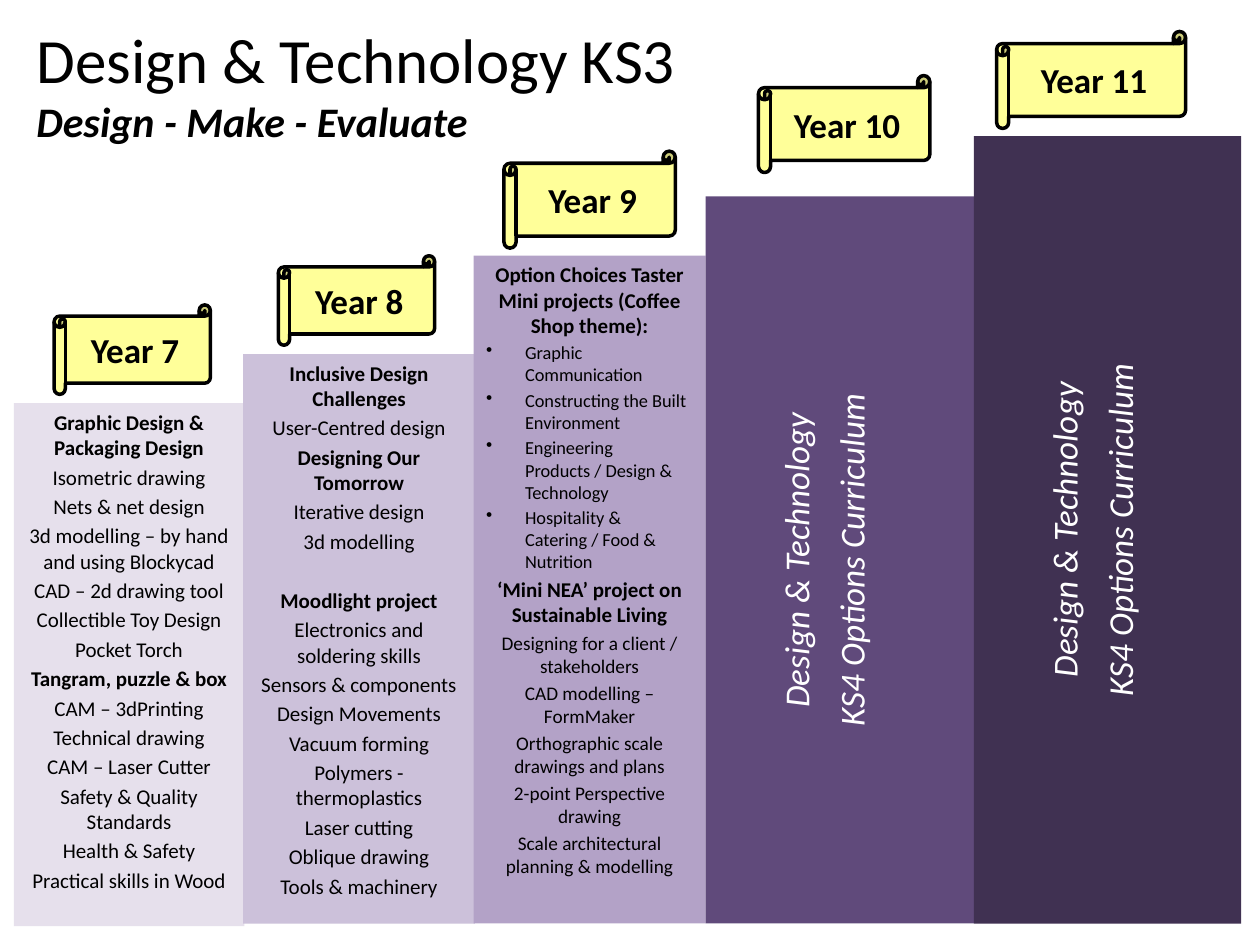
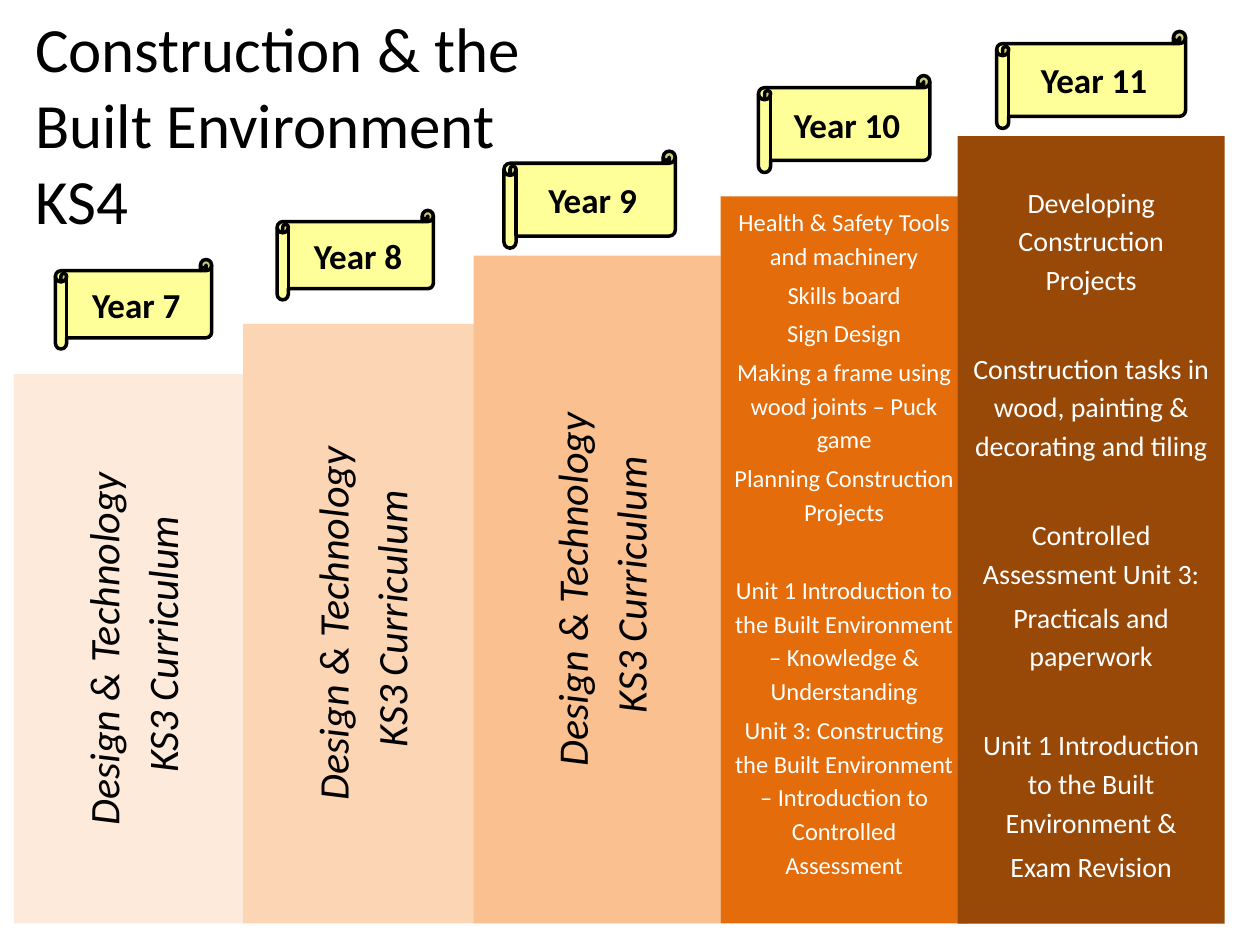
from dataclasses import dataclass

from lxml.etree import SubElement
from pptx import Presentation
from pptx.dml.color import RGBColor
from pptx.enum.shapes import MSO_SHAPE
from pptx.enum.text import MSO_ANCHOR, MSO_AUTO_SIZE, PP_ALIGN
from pptx.oxml.ns import qn
from pptx.util import Pt

PX = 9144
FONT = "Calibri"
BLACK, WHITE, SCROLL_YELLOW = "000000", "FFFFFF", "FFFF99"
FLOOR = 733
INSET = 5
BULLET_INDENT = 31
LINE_HEIGHT = 1.22
BEFORE = 0.2


def px(length):
    """Turn px into EMU."""
    return int(length * PX)


def colour(code):
    """Turn a hex string into a colour."""
    return RGBColor.from_string(code)


def blank_line(size, spacing):
    """Give the height in points of an empty line and the space before it."""
    return size * (LINE_HEIGHT * spacing + BEFORE)


@dataclass
class Entry:
    """One paragraph of a year's column."""
    text: str
    size: float = 12
    bold: bool = False
    italic: bool = False
    bullet: bool = False
    gap: bool = False


@dataclass
class Column:
    """Place and colours of a year's column."""
    left: int
    top: int
    width: int
    fill: str
    ink: str = BLACK
    bottom: int = FLOOR


def entries(size, *texts):
    """Make plain entries of one size."""
    return [Entry(text, size) for text in texts]


def heading(text, gap=False):
    """Make a bold entry."""
    return Entry(text, bold=True, gap=gap)


class Builder:
    """Holds the deck, its style and the current page."""

    def __init__(self):
        """Start an empty deck."""
        self.deck = Presentation()
        self.deck.slide_width, self.deck.slide_height = px(1000), px(750)
        self.page = None

    def new_page(self):
        """Add a blank page and make it current."""
        self.page = self.deck.slides.add_slide(self.deck.slide_layouts[6])

    def style(self, font, size, ink=BLACK, bold=False, italic=False):
        """Set a font."""
        font.name, font.size = FONT, Pt(size)
        font.bold, font.italic = bold, italic
        font.color.rgb = colour(ink)

    def title(self, left, top, width, height, *spans):
        """Add a title made of (text, size, emphasis) spans."""
        box = self.page.shapes.add_textbox(*map(px, (left, top, width, height)))
        frame = box.text_frame
        frame.word_wrap = True
        frame.auto_size = MSO_AUTO_SIZE.SHAPE_TO_FIT_TEXT
        for text, size, emphasis in spans:
            span = frame.paragraphs[0].add_run()
            span.text = text
            self.style(span.font, size, bold=emphasis, italic=emphasis)

    def shape(self, kind, left, top, width, height, fill):
        """Add a filled shape without shadow or line."""
        box = self.page.shapes.add_shape(kind, *map(px, (left, top, width, height)))
        box.shadow.inherit = False
        box.fill.solid()
        box.fill.fore_color.rgb = colour(fill)
        box.line.fill.background()
        box.text_frame.word_wrap = True
        return box

    def scroll(self, year, left, top, width, height):
        """Add the scroll that names a year."""
        box = self.shape(MSO_SHAPE.HORIZONTAL_SCROLL, left, top, width, height, SCROLL_YELLOW)
        box.line.color.rgb = colour(BLACK)
        box.line.width = Pt(2)
        box.text_frame.vertical_anchor = MSO_ANCHOR.MIDDLE
        para = box.text_frame.paragraphs[0]
        para.text = f"Year {year}"
        para.alignment = PP_ALIGN.CENTER
        self.style(para.font, 20, bold=True)

    def bullet(self, para):
        """Give a paragraph a hanging bullet."""
        properties = para._p.get_or_add_pPr()
        properties.set("marL", str(px(BULLET_INDENT)))
        properties.set("indent", str(-px(BULLET_INDENT)))
        SubElement(properties, qn("a:buChar")).set("char", "•")

    def column(self, place, lines, spacing=1.0, lead=0):
        """Add a year's column, its text starting below a blank line of size lead."""
        box = self.shape(MSO_SHAPE.RECTANGLE, place.left, place.top, place.width,
                         place.bottom - place.top, place.fill)
        frame = box.text_frame
        frame.vertical_anchor = MSO_ANCHOR.TOP
        frame.margin_top = px(INSET) + Pt(blank_line(lead, spacing))
        for index, line in enumerate(lines):
            para = frame.add_paragraph() if index else frame.paragraphs[0]
            para.text = line.text
            para.alignment = PP_ALIGN.LEFT if line.bullet else PP_ALIGN.CENTER
            para.line_spacing = spacing
            skipped = blank_line(line.size, spacing) if line.gap else 0
            para.space_before = Pt(round(line.size * BEFORE + skipped, 1))
            if line.bullet:
                self.bullet(para)
            self.style(para.font, line.size, place.ink, line.bold, line.italic)
        return frame

    def sideways_column(self, place, stage, size, spacing=1.0, lead=20):
        """Add a column whose text reads upwards."""
        lines = [Entry(text, size, italic=True) for text in ("Design & Technology", stage)]
        frame = self.column(place, lines, spacing)
        frame.margin_left = px(INSET) + Pt(blank_line(lead, spacing))
        frame.margin_right = px(INSET)
        frame.margin_top = frame.margin_bottom = px(10)
        frame._txBody.bodyPr.set("vert", "vert270")

    def upper_scrolls(self):
        """Add the scrolls that stand in the same place on every page."""
        self.scroll(9, 400, 120, 136, 77)
        self.scroll(10, 602, 60, 136, 77)
        self.scroll(11, 791, 25, 150, 77)


def key_stage_3(builder):
    """Build the Design & Technology page."""
    builder.new_page()
    builder.title(19, 11, 541, 111, ("Design & Technology KS3 ", 36, False),
                  ("Design - Make - Evaluate", 24, True))
    builder.column(Column(11, 320, 183, "E6E0EC", bottom=735), [
        heading("Graphic Design & Packaging Design"),
        *entries(12, "Isometric drawing", "Nets & net design",
                 "3d modelling – by hand and using Blockycad", "CAD – 2d drawing tool",
                 "Collectible Toy Design", "Pocket Torch"),
        heading("Tangram, puzzle & box"),
        *entries(12, "CAM – 3dPrinting", "Technical drawing", "CAM – Laser Cutter",
                 "Safety & Quality Standards", "Health & Safety", "Practical skills in Wood"),
    ])
    builder.column(Column(193, 281, 184, "CCC1DA"), [
        heading("Inclusive Design Challenges"),
        *entries(12, "User-Centred design"),
        heading("Designing Our Tomorrow"),
        *entries(12, "Iterative design", "3d modelling"),
        heading("Moodlight project", gap=True),
        *entries(12, "Electronics and soldering skills", "Sensors & components",
                 "Design Movements", "Vacuum forming", "Polymers - thermoplastics",
                 "Laser cutting", "Oblique drawing", "Tools & machinery"),
    ])
    tasters = ("Graphic Communication", "Constructing the Built Environment",
               "Engineering Products / Design & Technology",
               "Hospitality & Catering / Food & Nutrition")
    builder.column(Column(376, 203, 184, "B3A2C7"), [
        heading("Option Choices Taster Mini projects (Coffee Shop theme):"),
        *(Entry(text, 10.5, bullet=True) for text in tasters),
        heading("‘Mini NEA’ project on Sustainable Living"),
        *entries(11, "Designing for a client / stakeholders", "CAD modelling – FormMaker",
                 "Orthographic scale drawings and plans", "2-point Perspective drawing",
                 "Scale architectural planning & modelling"),
    ])
    for place in (Column(560, 156, 213, "604A7B", WHITE), Column(773, 108, 212, "403152", WHITE)):
        builder.sideways_column(place, "KS4 Options Curriculum", 20, spacing=1.15)
    builder.scroll(7, 43, 242, 124, 71)
    builder.scroll(8, 221, 203, 124, 71)
    builder.upper_scrolls()


def key_stage_4(builder):
    """Build the Construction page."""
    builder.new_page()
    builder.title(18, 3, 443, 192, ("Construction & the Built Environment KS4", 36, False))
    for place, lead in ((Column(11, 297, 183, "FDEADA"), 23),
                        (Column(193, 257, 184, "FCD5B5"), 23),
                        (Column(376, 203, 196, "FAC090"), 26.5)):
        builder.sideways_column(place, " KS3 Curriculum", 24, lead=lead)
    builder.column(Column(572, 156, 196, "E46C0A", WHITE), [
        *entries(14, "Health & Safety Tools and machinery", "Skills board", "Sign Design",
                 "Making a frame using wood joints – Puck game",
                 "Planning Construction Projects"),
        Entry("Unit 1 Introduction to the Built Environment – Knowledge & Understanding",
              14, gap=True),
        *entries(14, "Unit 3: Constructing the Built Environment – Introduction to "
                     "Controlled Assessment"),
    ], spacing=1.15)
    builder.column(Column(760, 108, 212, "984807", WHITE), [
        *entries(16, "Developing Construction Projects"),
        Entry("Construction tasks in wood, painting & decorating and tiling", 16, gap=True),
        Entry("Controlled Assessment Unit 3:", 16, gap=True),
        *entries(16, "Practicals and paperwork"),
        Entry("Unit 1 Introduction to the Built Environment &", 16, gap=True),
        *entries(16, "Exam Revision"),
    ], spacing=1.15, lead=13.5)
    builder.scroll(7, 44, 206, 124, 71)
    builder.scroll(8, 220, 167, 124, 71)
    builder.upper_scrolls()


def main():
    """Build and save the deck."""
    builder = Builder()
    key_stage_3(builder)
    key_stage_4(builder)
    builder.deck.save("out.pptx")


if __name__ == "__main__":
    main()
